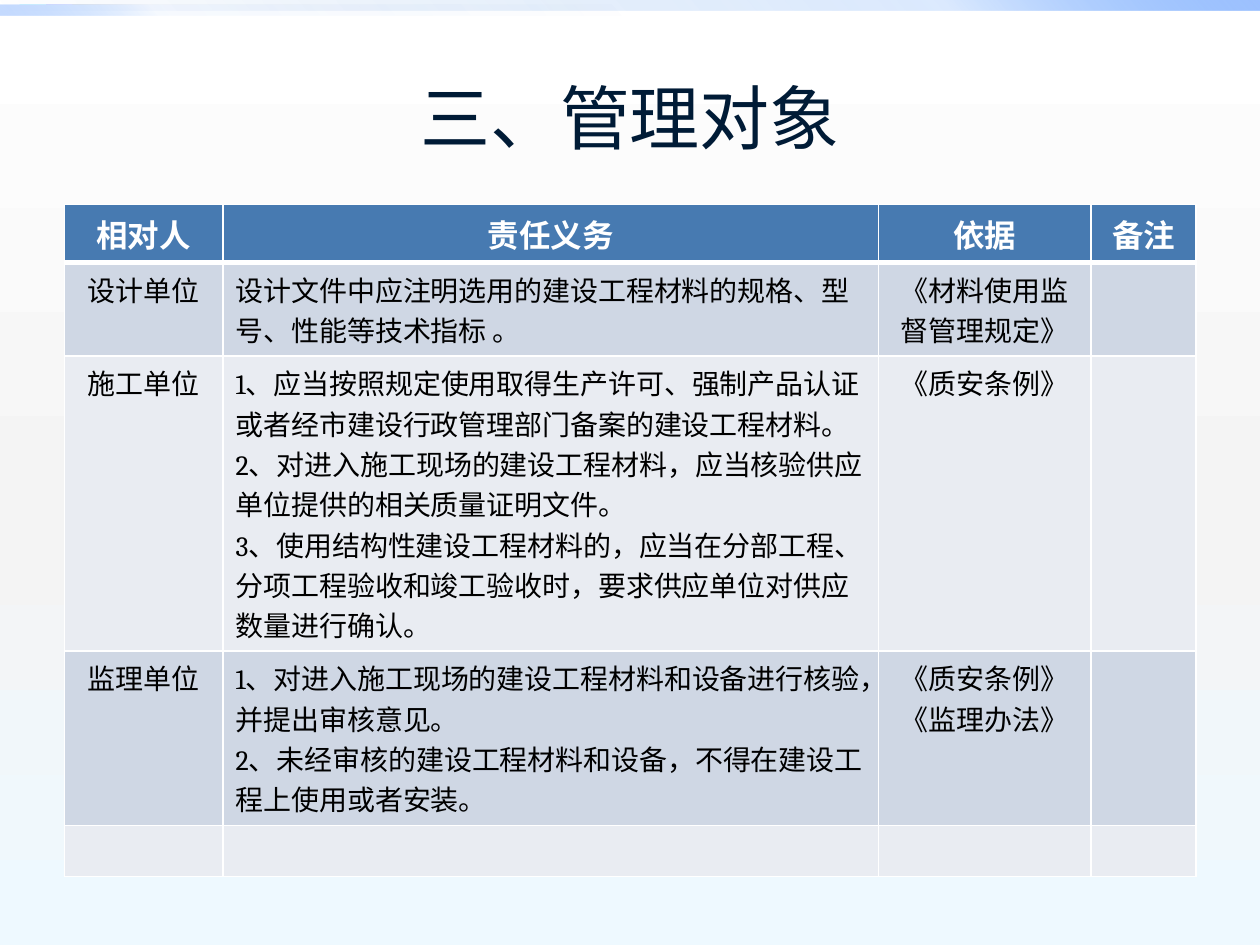
from lxml import etree
from pptx import Presentation
from pptx.dml.color import RGBColor
from pptx.enum.shapes import MSO_SHAPE
from pptx.enum.text import MSO_ANCHOR, PP_ALIGN
from pptx.oxml.ns import qn
from pptx.util import Pt

CENTER, LEFT = PP_ALIGN.CENTER, PP_ALIGN.LEFT
MIDDLE = MSO_ANCHOR.MIDDLE
RECTANGLE = MSO_SHAPE.RECTANGLE
TITLE_ONLY = 5

SANS, SERIF = "Noto Sans CJK SC", "Cambria"
NAVY, WHITE, BLACK = "001B36", "FFFFFF", "000000"
HEADER_FILL, BANDS = "477AB1", ("CFD7E4", "E9ECF2")

TITLE_FORMAT = {"size": Pt(40), "name": SANS}
HEADER_FORMAT = {"size": Pt(18), "name": SERIF, "bold": True}
BODY_FORMAT = {"size": Pt(16), "bold": False}

COLUMN_WIDTHS = (90.7, 374.4, 121.7, 59.8)
ROW_HEIGHTS = (32.5, 53.5, 168.5, 99.5, 29)
COLUMN_FONTS = (SANS, SERIF, SANS, SERIF)
COLUMN_ALIGNS = (CENTER, LEFT, CENTER, CENTER)

HEADERS = ("相对人", "责任义务", "依据", "备注")
DUTIES = (
    (["设计单位"],
     ["设计文件中应注明选用的建设工程材料的规格、型号、性能等技术指标 。"],
     ["《材料使用监督管理规定》"], []),
    (["施工单位"],
     ["1、应当按照规定使用取得生产许可、强制产品认证或者经市建设行政管理部门备案的建设工程材料。",
      "2、对进入施工现场的建设工程材料，应当核验供应单位提供的相关质量证明文件。",
      "3、使用结构性建设工程材料的，应当在分部工程、分项工程验收和竣工验收时，要求供应单位对供应数量进行确认。"],
     ["《质安条例》"], []),
    (["监理单位"],
     ["1、对进入施工现场的建设工程材料和设备进行核验，并提出审核意见。",
      "2、未经审核的建设工程材料和设备，不得在建设工程上使用或者安装。"],
     ["《质安条例》", "《监理办法》"], []),
    ([], [], [], []),
)


def color(value):
    return RGBColor.from_string(value)


class SlideBuilder:
    def __init__(self, slide):
        self.slide = slide

    def gradient(self, owner, element, stops, angle):
        """Stops are (position %, colour, opacity %)."""
        owner.fill.gradient()
        grad = element.find(".//" + qn("a:gradFill"))
        for child in list(grad):
            grad.remove(child)
        stop_list = etree.SubElement(grad, qn("a:gsLst"))
        for position, value, opacity in stops:
            stop = etree.SubElement(stop_list, qn("a:gs"), pos=str(position * 1000))
            rgb = etree.SubElement(stop, qn("a:srgbClr"), val=value)
            if opacity < 100:
                etree.SubElement(rgb, qn("a:alpha"), val=str(opacity * 1000))
        etree.SubElement(grad, qn("a:lin"), ang=str(angle * 60000), scaled="0")

    def background(self, stops, angle):
        self.gradient(self.slide.background, self.slide.element, stops, angle)

    def bar(self, box, stops, angle):
        bar = self.slide.shapes.add_shape(RECTANGLE, *map(Pt, box))
        bar.shadow.inherit = False
        bar.line.fill.background()
        self.gradient(bar, bar.element, stops, angle)

    def add_lines(self, frame, lines, formats, text_color, align):
        for index, line in enumerate(lines):
            paragraph = frame.add_paragraph() if index else frame.paragraphs[0]
            paragraph.alignment = align
            run = paragraph.add_run()
            run.text = line
            for key, value in formats.items():
                setattr(run.font, key, value)
            run.font.color.rgb = color(text_color)
            etree.SubElement(run.font._element, qn("a:ea"), typeface=SANS)

    def title(self, text, box):
        title = self.slide.shapes.title
        for key, value in zip(("left", "top", "width", "height"), box):
            setattr(title, key, Pt(value))
        title.text_frame.vertical_anchor = MIDDLE
        self.add_lines(title.text_frame, [text], TITLE_FORMAT, NAVY, CENTER)

    def borders(self, cell, top, bottom):
        properties = cell._tc.get_or_add_tcPr()
        for side, width in (("L", 1), ("R", 1), ("T", top), ("B", bottom)):
            line = etree.SubElement(properties, qn("a:ln" + side), w=str(int(Pt(width))))
            fill = etree.SubElement(line, qn("a:solidFill"))
            etree.SubElement(fill, qn("a:srgbClr"), val=WHITE)

    def table(self, left, top):
        table = self.slide.shapes.add_table(
            len(ROW_HEIGHTS), len(COLUMN_WIDTHS), Pt(left), Pt(top),
            Pt(sum(COLUMN_WIDTHS)), Pt(sum(ROW_HEIGHTS))).table
        table.horz_banding = False
        for column, width in zip(table.columns, COLUMN_WIDTHS):
            column.width = Pt(width)
        for row, height in zip(table.rows, ROW_HEIGHTS):
            row.height = Pt(height)

        # Header row
        for column, heading in enumerate(HEADERS):
            self.cell(table.cell(0, column), [heading], HEADER_FORMAT,
                      WHITE, CENTER, HEADER_FILL, (1, 3))

        # Banded body rows
        for row, duty in enumerate(DUTIES, start=1):
            for column, lines in enumerate(duty):
                formats = {**BODY_FORMAT, "name": COLUMN_FONTS[column]}
                self.cell(table.cell(row, column), lines, formats, BLACK,
                          COLUMN_ALIGNS[column], BANDS[(row - 1) % 2],
                          (3 if row == 1 else 1, 1))

    def cell(self, cell, lines, formats, text_color, align, fill, edges):
        self.borders(cell, *edges)
        cell.fill.solid()
        cell.fill.fore_color.rgb = color(fill)
        self.add_lines(cell.text_frame, lines, formats, text_color, align)


def main():
    deck = Presentation()
    deck.slide_width, deck.slide_height = Pt(720), Pt(540)
    builder = SlideBuilder(deck.slides.add_slide(deck.slide_layouts[TITLE_ONLY]))

    # Backdrop and top bars
    builder.background([(0, WHITE, 100), (55, "F4F4F4", 100), (100, "EEF9FF", 100)], 90)
    builder.bar((0, 0, 720, 5.76),
                [(0, "0058B7", 0), (75, "4F95FF", 20), (100, "9EC2FF", 100)], 315)
    builder.bar((0, 2.88, 360, 5.76),
                [(0, "0058B7", 0), (75, "4F95FF", 5), (100, "9EC2FF", 60)], 135)

    # Title and duties table
    builder.title("三、管理对象", (0, 21.6, 720, 90))
    builder.table(36.8, 116.8)

    deck.save("out.pptx")


if __name__ == "__main__":
    main()
